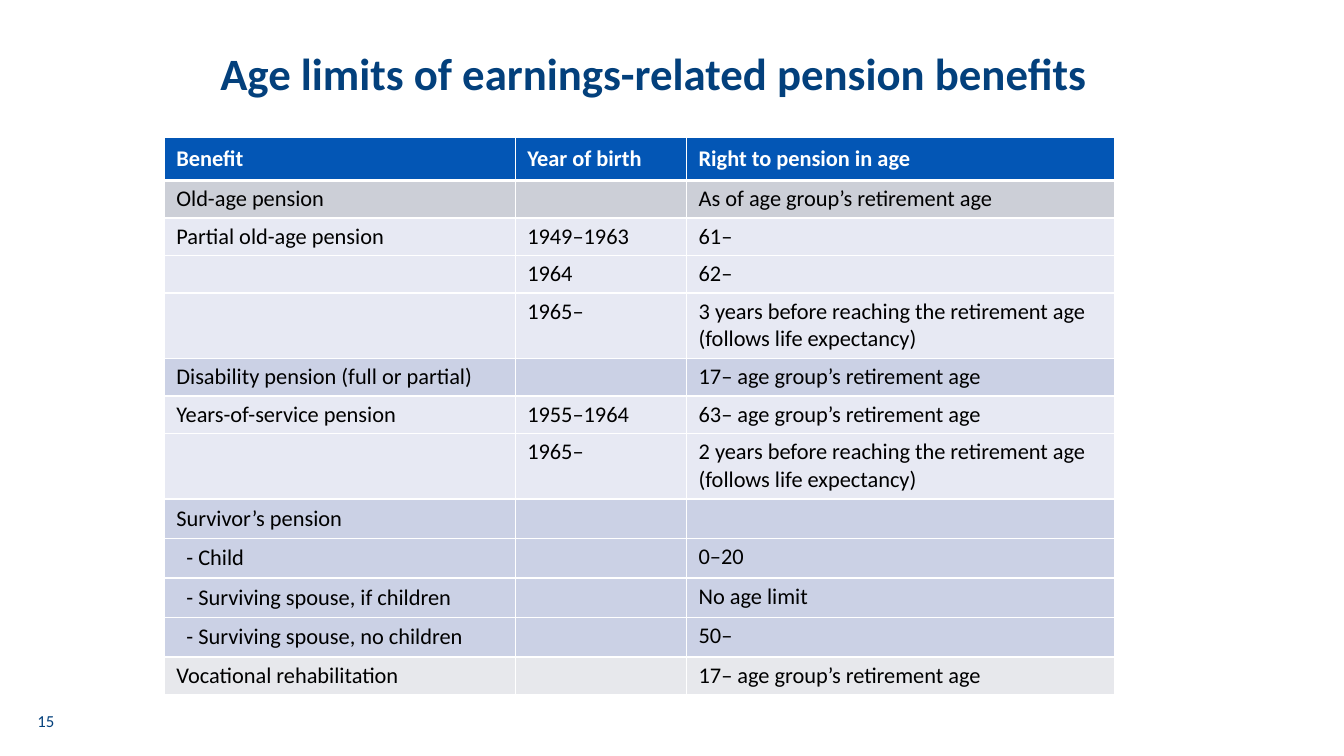
from lxml import etree
from pptx import Presentation
from pptx.dml.color import RGBColor
from pptx.enum import text
from pptx.oxml import ns
from pptx.util import Inches, Pt

NAVY = RGBColor(0x03, 0x40, 0x7C)
BLUE = RGBColor(0x03, 0x56, 0xB5)
WHITE = RGBColor(0xFF, 0xFF, 0xFF)
BLACK = RGBColor(0, 0, 0)
GREY = RGBColor(0xCC, 0xCF, 0xD7)
PALE_BLUE = RGBColor(0xE7, 0xE9, 0xF3)
MID_BLUE = RGBColor(0xCB, 0xD1, 0xE5)
PALE_GREY = RGBColor(0xE7, 0xE8, 0xEC)
FONT = "Calibri"

TITLE = "Age limits of earnings-related pension benefits"
PAGE_NUMBER = "15"
COLUMN_WIDTHS = (3.48, 1.7, 4.24)
SINGLE, DOUBLE, SURVIVOR, HEADER = 0.37, 0.65, 0.39, 0.43
ROWS = [
    (HEADER, BLUE, "Benefit", "Year of birth", "Right to pension in age"),
    (SINGLE, GREY, "Old-age pension", "", "As of age group’s retirement age"),
    (SINGLE, PALE_BLUE, "Partial old-age pension", "1949–1963", "61–"),
    (SINGLE, PALE_BLUE, "", "1964", "62–"),
    (DOUBLE, PALE_BLUE, "", "1965–",
     "3 years before reaching the retirement age (follows life expectancy)"),
    (SINGLE, MID_BLUE, "Disability pension (full or partial)", "",
     "17– age group’s retirement age"),
    (SINGLE, PALE_BLUE, "Years-of-service pension", "1955–1964",
     "63– age group’s retirement age"),
    (DOUBLE, PALE_BLUE, "", "1965–",
     "2 years before reaching the retirement age (follows life expectancy)"),
    (SURVIVOR, MID_BLUE, "Survivor’s pension", "", ""),
    (SURVIVOR, MID_BLUE, "- Child", "", "0–20"),
    (SURVIVOR, MID_BLUE, "- Surviving spouse, if children", "", "No age limit"),
    (SURVIVOR, MID_BLUE, "- Surviving spouse, no children", "", "50–"),
    (SINGLE, PALE_GREY, "Vocational rehabilitation", "",
     "17– age group’s retirement age"),
]


def format_paragraph(paragraph, size, color, bold=False):
    for run in paragraph.runs:
        run.font.name = FONT
        run.font.size = Pt(size)
        run.font.bold = bold
        run.font.color.rgb = color


def set_borders(cell, widths):
    properties = cell._tc.get_or_add_tcPr()
    for side, width in zip("LRTB", widths):
        line = etree.SubElement(properties, ns.qn(f"a:ln{side}"), w=str(Pt(width)))
        fill = etree.SubElement(line, ns.qn("a:solidFill"))
        etree.SubElement(fill, ns.qn("a:srgbClr"), val=str(WHITE))


def fill_cell(cell, content, row, column):
    height, color = ROWS[row][:2]
    is_header = row == 0
    is_centred = is_header or (height == SURVIVOR and column == 0)
    set_borders(cell, (
        0.25 if column == 0 else 1,
        0.25 if column == len(COLUMN_WIDTHS) - 1 else 1,
        0.25 if is_header else 3 if row == 1 else 1,
        3 if is_header else 0.25 if row == len(ROWS) - 1 else 1,
    ))
    cell.fill.solid()
    cell.fill.fore_color.rgb = color
    cell.margin_left = Inches(0.22 if content.startswith("-") else 0.12)
    cell.margin_right = Inches(0.12 if is_header else 0.05)
    cell.margin_top = cell.margin_bottom = Inches(0.06 if is_centred else 0.05)
    cell.vertical_anchor = text.MSO_ANCHOR.MIDDLE if is_centred else text.MSO_ANCHOR.TOP
    paragraph = cell.text_frame.paragraphs[0]
    if content:
        paragraph.text = content
        format_paragraph(paragraph, 16, WHITE if is_header else BLACK, is_header)
    else:
        etree.SubElement(paragraph._p, ns.qn("a:endParaRPr"), sz="1600")


presentation = Presentation()
presentation.slide_width = Inches(13.33)
presentation.slide_height = Inches(7.5)
slide = presentation.slides.add_slide(presentation.slide_layouts[5])

title = slide.shapes.title
title.left, title.top = Inches(0), Inches(0.44)
title.width, title.height = Inches(12.97), Inches(0.63)
title.text_frame.text = TITLE
title.text_frame.vertical_anchor = text.MSO_ANCHOR.MIDDLE
heading = title.text_frame.paragraphs[0]
heading.alignment = text.PP_ALIGN.CENTER
heading.line_spacing = 0.9
format_paragraph(heading, 32, NAVY, True)

table = slide.shapes.add_table(
    len(ROWS), len(COLUMN_WIDTHS), Inches(1.63), Inches(1.36),
    Inches(sum(COLUMN_WIDTHS)), Inches(sum(row[0] for row in ROWS))).table
table.horz_banding = False
for column, width in enumerate(COLUMN_WIDTHS):
    table.columns[column].width = Inches(width)
for row, (height, color, *contents) in enumerate(ROWS):
    table.rows[row].height = Inches(height)
    for column, content in enumerate(contents):
        fill_cell(table.cell(row, column), content, row, column)

page_box = slide.shapes.add_textbox(Inches(0.2), Inches(6.95), Inches(0.51), Inches(0.4))
page_box.text_frame.word_wrap = True
page_box.text_frame.vertical_anchor = text.MSO_ANCHOR.MIDDLE
page_box.text_frame.text = PAGE_NUMBER
page_paragraph = page_box.text_frame.paragraphs[0]
page_paragraph.alignment = text.PP_ALIGN.CENTER
format_paragraph(page_paragraph, 12, NAVY)

presentation.save("out.pptx")
